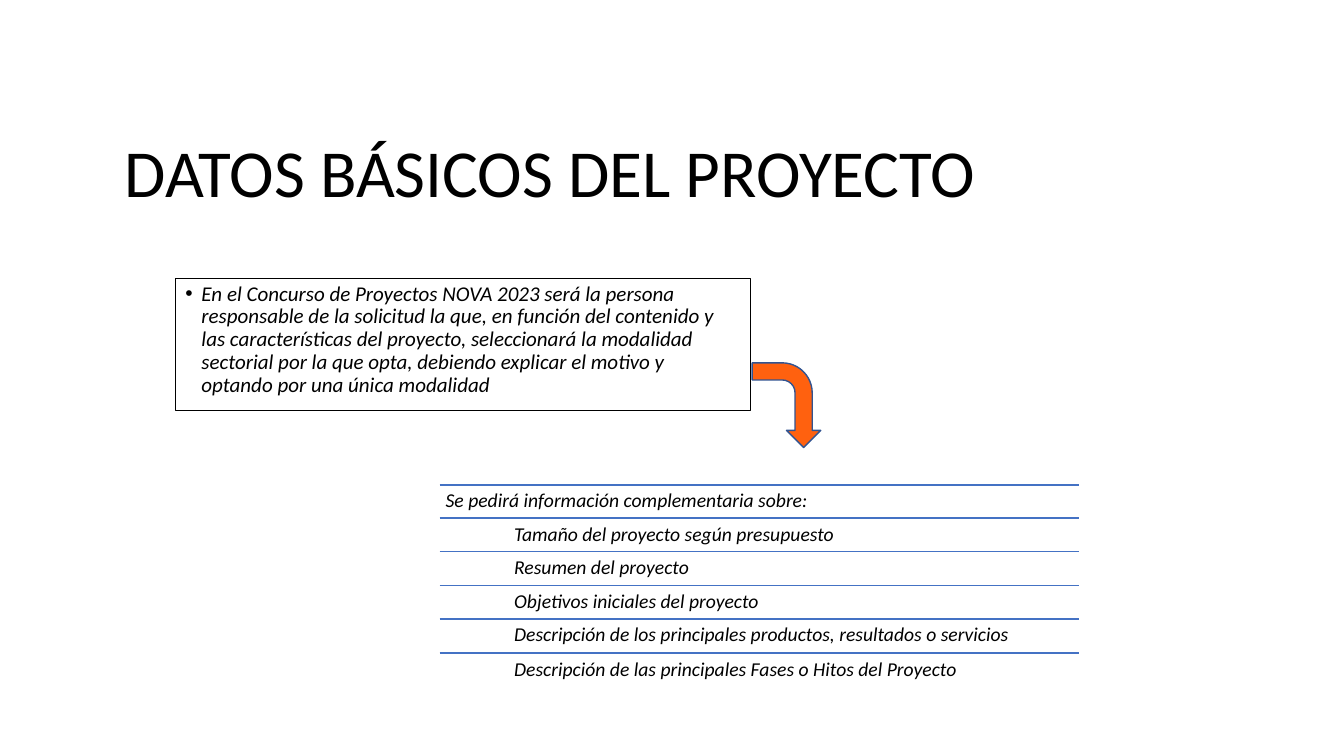
from lxml import etree
from pptx import Presentation
from pptx.dml.color import RGBColor
from pptx.enum.shapes import MSO_CONNECTOR as Link, MSO_SHAPE as Kind
from pptx.enum.text import MSO_ANCHOR as Anchor
from pptx.oxml.ns import qn
from pptx.util import Pt

PX = 9144  # 100 px to the inch
BLACK, BLUE, NAVY, ORANGE = "000000", "4472C4", "325491", "FF610F"
TITLE = "DATOS BÁSICOS DEL PROYECTO"
NOTE = (
    "En el Concurso de Proyectos NOVA 2023 será la persona responsable "
    "de la solicitud la que, en función del contenido y las características "
    "del proyecto, seleccionará la modalidad sectorial por la que opta, "
    "debiendo explicar el motivo y optando por una única modalidad"
)
ROWS = [
    "Se pedirá información complementaria sobre:",
    "\tTamaño del proyecto según presupuesto",
    "\tResumen del proyecto",
    "\tObjetivos iniciales del proyecto",
    "\tDescripción de los principales productos, resultados o servicios",
    "\tDescripción de las principales Fases o Hitos del Proyecto",
]


def color(code):
    return RGBColor.from_string(code)


def emu(*vals):
    return [val * PX for val in vals]


class Deck:
    def __init__(self, wide, high, font):
        self.font = font
        self.prs = Presentation()
        self.prs.slide_width, self.prs.slide_height = emu(wide, high)
        self.slide = self.prs.slides.add_slide(self.prs.slide_layouts[6])
        self.shapes = self.slide.shapes

    def text(self, box, words, size, italic=True, anchor=Anchor.TOP, pad=None):
        """Add a text box and return it with its paragraph."""
        item = self.shapes.add_textbox(*emu(*box))
        frame = item.text_frame
        frame.word_wrap = True
        frame.vertical_anchor = anchor
        if pad is not None:
            frame.margin_left = frame.margin_right = pad * PX
            frame.margin_top = frame.margin_bottom = pad * PX
        para = frame.paragraphs[0]
        para.line_spacing = 0.9
        run = para.add_run()
        run.text = words
        run.font.name = self.font
        run.font.size = Pt(size)
        run.font.italic = italic
        run.font.color.rgb = color(BLACK)
        return item, para

    def bullet(self, para, indent):
        props = para._p.get_or_add_pPr()
        props.set("marL", str(indent * PX))
        props.set("indent", str(-indent * PX))
        etree.SubElement(props, qn("a:buFont"), typeface="Arial")
        etree.SubElement(props, qn("a:buChar"), char="•")

    def tab(self, para, pos):
        tabs = etree.SubElement(para._p.get_or_add_pPr(), qn("a:tabLst"))
        etree.SubElement(tabs, qn("a:tab"), pos=str(pos * PX), algn="l")

    def edge(self, item, code, width):
        item.line.color.rgb = color(code)
        item.line.width = Pt(width)

    def rule(self, left, top, wide):
        """Draw a horizontal divider."""
        ends = emu(left, top, left + wide, top)
        line = self.shapes.add_connector(Link.STRAIGHT, *ends)
        self.edge(line, BLUE, 1)
        etree.SubElement(line._element.spPr, qn("a:effectLst"))

    def arrow(self, box, turn):
        item = self.shapes.add_shape(Kind.BENT_ARROW, *emu(*box))
        item.shadow.inherit = False
        item.rotation = turn
        item.fill.solid()
        item.fill.fore_color.rgb = color(ORANGE)
        self.edge(item, NAVY, 1)


def main():
    deck = Deck(1333, 750, "Calibri")
    deck.text((114, 89, 1113, 170), TITLE, 48, False, Anchor.MIDDLE)

    note, para = deck.text((174, 276, 570, 131), NOTE, 15)
    deck.edge(note, BLACK, 0.75)
    deck.bullet(para, 16)

    left, top, wide, span = 436, 481, 634, 167
    for i, words in enumerate(ROWS):
        y = top + span * i // (len(ROWS) - 1)
        deck.rule(left, y, wide)
        _, para = deck.text((left, y, wide, 33), words, 14, pad=6)
        if words.startswith("\t"):
            deck.tab(para, 68)

    deck.arrow((738, 368, 84, 68), 90)
    deck.prs.save("out.pptx")


if __name__ == "__main__":
    main()
